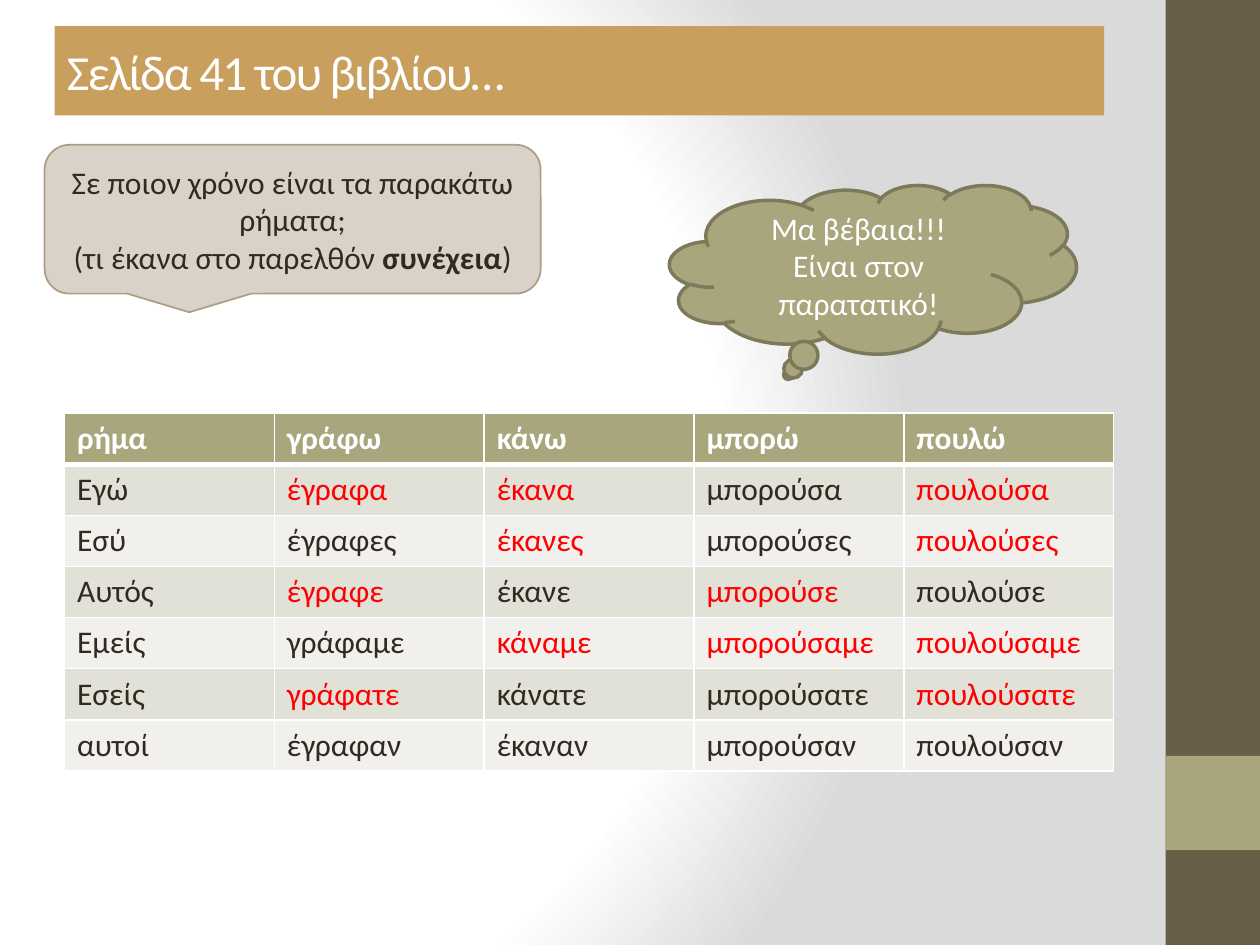
from lxml import etree
from pptx import Presentation
from pptx import util as u
from pptx.dml.color import RGBColor
from pptx.enum import shapes, text
from pptx.oxml import parse_xml
from pptx.oxml.ns import nsdecls, qn

# Content
TITLE = "Σελίδα 41 του βιβλίου…"
QUESTION = [
    [("Σε ποιον χρόνο είναι τα παρακάτω ρήματα;", False)],
    [("(τι έκανα στο παρελθόν ", False), ("συνέχεια", True), (")", False)],
]
ANSWER = [[("Μα βέβαια!!!", False)], [("Είναι στον παρατατικό!", False)]]
VERBS = [
    ["ρήμα", "γράφω", "κάνω", "μπορώ", "πουλώ"],
    ["Εγώ", "έγραφα", "έκανα", "μπορούσα", "πουλούσα"],
    ["Εσύ", "έγραφες", "έκανες", "μπορούσες", "πουλούσες"],
    ["Αυτός", "έγραφε", "έκανε", "μπορούσε", "πουλούσε"],
    ["Εμείς", "γράφαμε", "κάναμε", "μπορούσαμε", "πουλούσαμε"],
    ["Εσείς", "γράφατε", "κάνατε", "μπορούσατε", "πουλούσατε"],
    ["αυτοί", "έγραφαν", "έκαναν", "μπορούσαν", "πουλούσαν"],
]
FILLED_IN = {
    "έγραφα", "έκανα", "πουλούσα", "έκανες", "πουλούσες", "έγραφε", "μπορούσε",
    "κάναμε", "μπορούσαμε", "πουλούσαμε", "γράφατε", "πουλούσατε",
}

COLORS = {
    "white": "FFFFFF", "grey": "DADADA", "ink": "2F2B20", "red": "FF0000",
    "brown": "675E47", "olive": "A9A57C", "olive_line": "7D7A5C",
    "gold": "C89F5D", "sand": "D9D2C9", "sand_line": "AE9D85",
    "band_dark": "E2E1D7", "band_light": "F1F0EC",
}
FONT = "Calibri"
COLUMN_WIDTH, ROW_HEIGHT = 4.23, 1.03


def rgb(name):
    return RGBColor.from_string(COLORS[name])


def write(frame, paragraphs, size=18, color="ink", align=text.PP_ALIGN.LEFT,
          spacing=None):
    """Fill a text frame with paragraphs, each a list of (text, bold) runs."""
    frame.word_wrap = True
    for index, runs in enumerate(paragraphs):
        paragraph = frame.add_paragraph() if index else frame.paragraphs[0]
        paragraph.alignment = align
        for words, bold in runs:
            run = paragraph.add_run()
            run.text = words
            run.font.name, run.font.size = FONT, u.Pt(size)
            run.font.bold = bold
            run.font.color.rgb = rgb(color)
            if spacing:
                run._r.get_or_add_rPr().set("spc", str(spacing * 100))


def add_shape(slide, kind, box, fill, line=None, width=1):
    shape = slide.shapes.add_shape(kind, *map(u.Cm, box))
    shape.shadow.inherit = False
    shape.fill.solid()
    shape.fill.fore_color.rgb = rgb(fill)
    if line:
        shape.line.color.rgb = rgb(line)
        shape.line.width = u.Pt(width)
    else:
        shape.line.fill.background()
    shape.text_frame.vertical_anchor = text.MSO_ANCHOR.MIDDLE
    return shape


def set_background(slide):
    stops = "".join(
        f'<a:gs pos="{at * 1000}"><a:srgbClr val="{COLORS[name]}"/></a:gs>'
        for at, name in ((0, "white"), (75, "white"), (100, "grey")))
    background = parse_xml(
        f'<p:bg {nsdecls("p", "a")}><p:bgPr><a:gradFill rotWithShape="1">'
        f'<a:gsLst>{stops}</a:gsLst><a:path path="circle">'
        '<a:fillToRect l="20000" t="50000" r="100000" b="50000"/></a:path>'
        '</a:gradFill><a:effectLst/></p:bgPr></p:bg>')
    slide.element.cSld.insert(0, background)


def set_borders(cell, top, bottom):
    properties = cell._tc.get_or_add_tcPr()
    for side, points in (("L", 1), ("R", 1), ("T", top), ("B", bottom)):
        line = etree.SubElement(properties, qn(f"a:ln{side}"), w=str(u.Pt(points)))
        fill = etree.SubElement(line, qn("a:solidFill"))
        etree.SubElement(fill, qn("a:srgbClr"), val=COLORS["white"])


def add_verb_table(slide, left, top):
    rows, columns = len(VERBS), len(VERBS[0])
    table = slide.shapes.add_table(
        rows, columns, u.Cm(left), u.Cm(top),
        u.Cm(columns * COLUMN_WIDTH), u.Cm(rows * ROW_HEIGHT)).table
    for column in table.columns:
        column.width = u.Cm(COLUMN_WIDTH)
    for r, verbs in enumerate(VERBS):
        table.rows[r].height = u.Cm(ROW_HEIGHT)
        header = r == 0
        band = "olive" if header else "band_dark" if r % 2 else "band_light"
        for c, verb in enumerate(verbs):
            cell = table.cell(r, c)
            set_borders(cell, top=3 if r == 1 else 1, bottom=3 if header else 1)
            cell.fill.solid()
            cell.fill.fore_color.rgb = rgb(band)
            color = "white" if header else "red" if verb in FILLED_IN else "ink"
            write(cell.text_frame, [[(verb, header)]], color=color)


def main():
    presentation = Presentation()
    presentation.slide_width, presentation.slide_height = u.Cm(25.4), u.Cm(19.05)
    slide = presentation.slides.add_slide(presentation.slide_layouts[6])
    kinds = shapes.MSO_SHAPE
    center = text.PP_ALIGN.CENTER

    # Background and side bar
    set_background(slide)
    add_shape(slide, kinds.RECTANGLE, (23.5, 0, 1.9, 19.05), "brown")
    add_shape(slide, kinds.RECTANGLE, (23.5, 15.24, 1.9, 1.9), "olive")

    # Title band
    title = add_shape(slide, kinds.RECTANGLE, (1.1, 0.53, 21.16, 1.8), "gold")
    write(title.text_frame, [[(TITLE, False)]], size=28, color="white", spacing=-1)

    # Verb table
    add_verb_table(slide, 1.3, 8.33)

    # Question and answer bubbles
    question = add_shape(slide, kinds.ROUNDED_RECTANGULAR_CALLOUT,
                         (0.9, 2.92, 10, 3), "sand", "sand_line")
    write(question.text_frame, QUESTION, align=center)
    answer = add_shape(slide, kinds.CLOUD_CALLOUT,
                       (13.5, 3.73, 8.2, 3.4), "olive", "olive_line", width=2)
    write(answer.text_frame, ANSWER, color="white", align=center)

    presentation.save("out.pptx")


if __name__ == "__main__":
    main()
